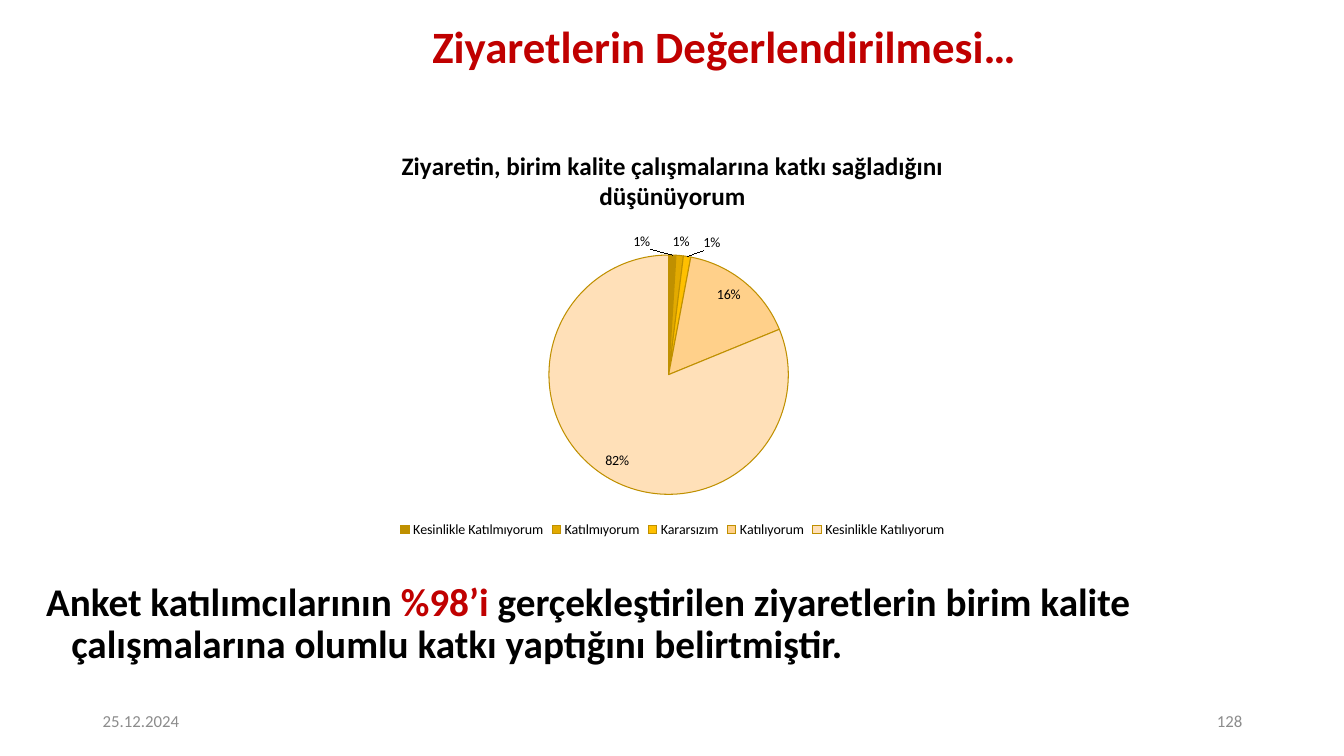
from lxml.etree import SubElement
from pptx import Presentation
from pptx.chart.data import CategoryChartData
from pptx.dml.color import RGBColor
from pptx.enum.chart import XL_CHART_TYPE, XL_LABEL_POSITION, XL_LEGEND_POSITION
from pptx.enum.text import MSO_ANCHOR, PP_ALIGN
from pptx.oxml import parse_xml
from pptx.oxml.ns import nsdecls, qn
from pptx.util import Inches, Pt

RED, BLACK, GREY, EDGE = "C00000", "000000", "8C8C8C", "BF9000"
# answer, percent, fill, label shift as a share of the chart width
ANSWERS = [
    ("Kesinlikle Katılmıyorum", 1, "BF9000", -0.04),
    ("Katılmıyorum", 1, "E2AA00", -0.01),
    ("Kararsızım", 1, "FFC000", 0.02),
    ("Katılıyorum", 16, "FFD08A", 0),
    ("Kesinlikle Katılıyorum", 82, "FFE0B8", 0),
]
FORMAT = '0"%"'


def paint(color):
    return RGBColor.from_string(color)


def style(font, size, color, bold=False):
    font.name, font.size, font.bold = "Calibri", Pt(size), bold
    font.color.rgb = paint(color)


def add_text(slide, box, parts, size, bold=False, align=PP_ALIGN.LEFT,
             anchor=MSO_ANCHOR.MIDDLE, spacing=1.0):
    """Add one paragraph made of (text, colour) parts and return it."""
    frame = slide.shapes.add_textbox(*map(Inches, box)).text_frame
    frame.word_wrap = True
    frame.vertical_anchor = anchor
    para = frame.paragraphs[0]
    para.alignment, para.line_spacing = align, spacing
    for text, color in parts:
        run = para.add_run()
        run.text = text
        style(run.font, size, color, bold)
    return para


def add_layout(parent, **places):
    """Fill a chart element with a manual layout."""
    layout = parent.find(qn("c:layout"))
    if layout is None:
        layout = parse_xml(f"<c:layout {nsdecls('c')}/>")
        parent.insert(1 if parent.tag == qn("c:dLbl") else 0, layout)
    manual = SubElement(layout, qn("c:manualLayout"))
    for name, value in places.items():
        SubElement(manual, qn(f"c:{name}")).set("val", str(value))


def add_labels(chart, series):
    labels = series.data_labels
    labels.show_value = True
    labels.number_format, labels.number_format_is_linked = FORMAT, False
    style(labels.font, 10, BLACK)
    for i, (_, value, fill, shift) in enumerate(ANSWERS):
        point = series.points[i]
        point.format.fill.solid()
        point.format.fill.fore_color.rgb = paint(fill)
        point.format.line.color.rgb = paint(EDGE)
        point.format.line.width = Pt(0.75)
        label = point.data_label
        style(label.font, 10, BLACK)
        label.position = (XL_LABEL_POSITION.OUTSIDE_END if value < 5
                          else XL_LABEL_POSITION.INSIDE_END)
    for item, answer in zip(chart.element.iter(qn("c:dLbl")), ANSWERS):
        code = parse_xml(f"<c:numFmt {nsdecls('c')} sourceLinked='0'/>")
        code.set("formatCode", FORMAT)
        item.insert(1, code)
        if answer[3]:
            add_layout(item, x=answer[3], y=0)


def add_pie(slide, box):
    data = CategoryChartData()
    data.categories = [answer[0] for answer in ANSWERS]
    data.add_series("Series 1", [answer[1] for answer in ANSWERS])
    chart = slide.shapes.add_chart(
        XL_CHART_TYPE.PIE, *map(Inches, box), data).chart
    style(chart.font, 10, BLACK)
    chart.has_title = True
    title = chart.chart_title.text_frame
    title.text = "Ziyaretin, birim kalite çalışmalarına katkı sağladığını düşünüyorum"
    style(title.paragraphs[0].runs[0].font, 18, BLACK, True)
    chart.has_legend = True
    chart.legend.position = XL_LEGEND_POSITION.BOTTOM
    chart.legend.include_in_layout = False
    style(chart.legend.font, 10, BLACK)
    plot = chart.plots[0]
    plot.vary_by_categories = True
    add_labels(chart, plot.series[0])
    area = next(chart.element.iter(qn("c:plotArea")))
    add_layout(area, layoutTarget="inner", xMode="edge", yMode="edge",
               x=0.34, y=0.3, w=0.31, h=0.59)


def add_finding(slide, box):
    parts = [
        ("Anket katılımcılarının ", BLACK),
        ("%98’i ", RED),
        ("gerçekleştirilen ziyaretlerin birim kalite çalışmalarına "
         "olumlu katkı yaptığını belirtmiştir.", BLACK),
    ]
    para = add_text(slide, box, parts, 28, True, anchor=MSO_ANCHOR.TOP, spacing=0.9)
    props = para._p.get_or_add_pPr()
    props.set("marL", str(Inches(0.25)))
    props.set("indent", str(Inches(-0.25)))


def add_footer(slide, left, top, width, height):
    half = 3
    add_text(slide, (left, top, half, height), [("25.12.2024", GREY)], 12)
    add_text(slide, (left + width - half, top, half, height),
             [("128", GREY)], 12, align=PP_ALIGN.RIGHT)


def main():
    deck = Presentation()
    deck.slide_width, deck.slide_height = Inches(13.33), Inches(7.5)
    slide = deck.slides.add_slide(deck.slide_layouts[6])
    add_text(slide, (1.92, 0.09, 10.53, 0.79),
             [("Ziyaretlerin Değerlendirilmesi…", RED)], 32, True,
             PP_ALIGN.CENTER, spacing=0.9)
    add_pie(slide, (2.84, 1.29, 7.66, 4.08))
    add_finding(slide, (0.36, 5.73, 12.46, 0.89))
    add_footer(slide, 0.92, 6.95, 11.5, 0.4)
    deck.save("out.pptx")


if __name__ == "__main__":
    main()
